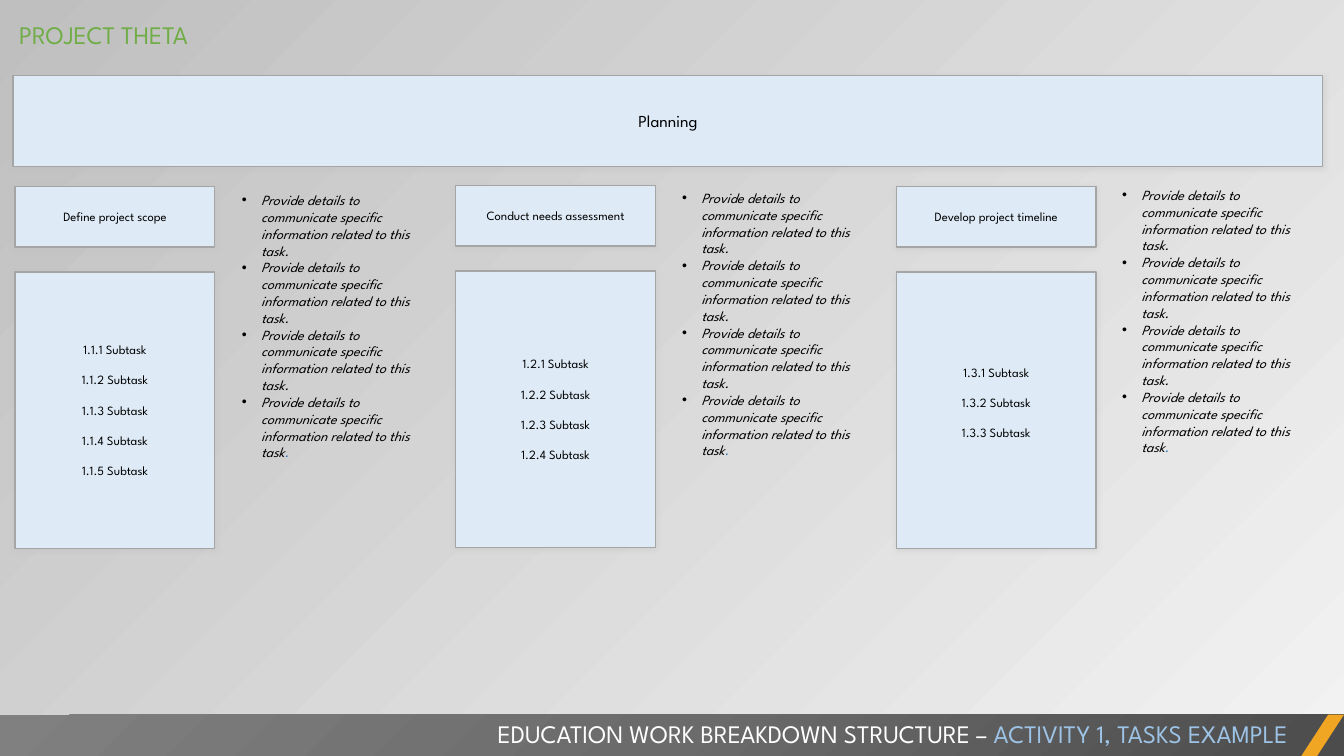
"""Build the planning slide of an education work breakdown structure."""
from lxml.etree import SubElement
from pptx import Presentation
from pptx.dml.color import RGBColor
from pptx.enum.shapes import MSO_SHAPE as Preset
from pptx.enum.text import MSO_ANCHOR as Anchor, MSO_AUTO_SIZE as AutoSize, PP_ALIGN as Align
from pptx.oxml import parse_xml
from pptx.oxml.ns import nsdecls, qn
from pptx.util import Inches, Pt

DETAIL = "Provide details to communicate specific information related to this task"
BLACK = "000000"
TASKS = [
    ("Define project scope", 5, 1.85, 1.85),
    ("Conduct needs assessment", 4, 1.84, 1.83),
    ("Develop project timeline", 3, 1.85, 1.8),
]


def colour(code):
    return RGBColor.from_string(code)


def write(frame, lines, size, align=Align.LEFT, gap=0, italic=False, **frame_format):
    frame_values = {"word_wrap": True, "vertical_anchor": Anchor.TOP, **frame_format}
    for name, value in frame_values.items():
        setattr(frame, name, value)
    for number, line in enumerate(lines):
        para = frame.add_paragraph() if number else frame.paragraphs[0]
        para_values = {"alignment": align, "line_spacing": 1.0, "space_after": Pt(0),
                       "space_before": Pt(gap if number else 0)}
        for name, value in para_values.items():
            setattr(para, name, value)
        for text, code in line:
            span = para.add_run()
            span.text = text
            span_values = {"name": "League Spartan", "size": Pt(size),
                           "bold": False, "italic": italic}
            for name, value in span_values.items():
                setattr(span.font, name, value)
            span.font.color.rgb = colour(code)


deck = Presentation()
deck.slide_width, deck.slide_height = Inches(13.33), Inches(7.5)
page = deck.slides.add_slide(deck.slide_layouts.get_by_name("Comparison"))

backdrop = page.background.fill
backdrop.gradient()
backdrop.gradient_angle = 135
for stop, code in zip(backdrop.gradient_stops, ["F2F2F2", "BFBFBF"]):
    stop.color.rgb = colour(code)

title = page.shapes.title
bodies = {holder.placeholder_format.idx: holder for holder in page.placeholders}
spare = bodies[3].element
spare.getparent().remove(spare)
details = [bodies[2], bodies[4], bodies[1]]

panels = [(0.13, 0.75, 12.99, 0.9, ["Planning"], 12, 0.05)]
for column, (task, count, top, detail_top) in enumerate(TASKS):
    left = 0.15 + 4.37 * column
    subtasks = [f"1.{column + 1}.{number + 1} Subtask" for number in range(count)]
    bottom_margin = 0.2 if count == 3 else 0.05
    panels.append((left, top, 1.98, 0.6, [task], 9, 0.05))
    panels.append((left, top + 0.85, 1.98, 2.74, subtasks, 9, bottom_margin))

    box = details[column]
    box.left, box.top, box.width, box.height = map(
        Inches, (2.3 + 4.365 * column, detail_top, 2.06, 3))
    lines = [[(DETAIL + ".", BLACK)]] * 3 + [[(DETAIL, BLACK), (".", "2E75B6")]]
    write(box.text_frame, lines, 10, italic=True, auto_size=AutoSize.NONE)
    for para in box.text_frame.paragraphs:
        properties = para._p.get_or_add_pPr()
        properties.set("marL", str(Inches(0.19)))
        properties.set("indent", str(-Inches(0.19)))
        SubElement(properties, qn("a:buFont"), typeface="Arial")
        SubElement(properties, qn("a:buChar"), char="•")

for left, top, width, height, texts, size, bottom_margin in panels:
    panel = page.shapes.add_shape(Preset.RECTANGLE, *map(Inches, (left, top, width, height)))
    panel.fill.solid()
    panel.fill.fore_color.rgb = colour("DEEBF7")
    panel.line.color.rgb = colour("A5A5A5")
    panel.line.width = Pt(1)
    panel.shadow.inherit = False
    panel._element.spPr.find(qn("a:effectLst")).append(parse_xml(
        f'<a:outerShdw {nsdecls("a")} blurRad="{Pt(4)}" dist="{Pt(1)}" dir="5400000">'
        '<a:srgbClr val="BFBFBF"><a:alpha val="40000"/></a:srgbClr></a:outerShdw>'))
    write(panel.text_frame, [[(text, BLACK)] for text in texts], size, Align.CENTER, 10.8,
          vertical_anchor=Anchor.MIDDLE, margin_bottom=Inches(bottom_margin))

bar = page.shapes.add_shape(Preset.RECTANGLE, *map(Inches, (0, 7.09, 13.33, 0.42)))
accent = page.shapes.add_shape(Preset.PARALLELOGRAM, *map(Inches, (12.9, 7.09, 0.43, 0.42)))
accent.adjustments[0] = 0.65
for shape in (bar, accent):
    shape.line.fill.background()
    shape.shadow.inherit = False
accent.fill.solid()
accent.fill.fore_color.rgb = colour("F0A622")
bar.fill.gradient()
shading = bar._element.spPr.find(qn("a:gradFill"))
stops = "".join(f'<a:gs pos="{place * 1000}"><a:srgbClr val="{code}"/></a:gs>'
                for place, code in [(0, "4C4C4C"), (50, "6B6B6B"), (100, "808080")])
shading.getparent().replace(shading, parse_xml(
    f'<a:gradFill {nsdecls("a")} rotWithShape="1"><a:gsLst>{stops}</a:gsLst>'
    '<a:path path="circle"><a:fillToRect l="100000" t="100000"/></a:path></a:gradFill>'))

footer = page.shapes.add_textbox(*map(Inches, (0.09, 7.08, 12.78, 0.4)))
write(footer.text_frame, [[("EDUCATION WORK BREAKDOWN STRUCTURE – ", "FFFFFF"),
                           ("ACTIVITY 1, TASKS EXAMPLE", "9DC3E6")]], 18, Align.RIGHT,
      auto_size=AutoSize.SHAPE_TO_FIT_TEXT)

title.left, title.top, title.width, title.height = map(Inches, (0.09, 0.14, 10.11, 0.4))
write(title.text_frame, [[("PROJECT THETA", "70AD47")]], 18, auto_size=AutoSize.NONE)

deck.save("out.pptx")
